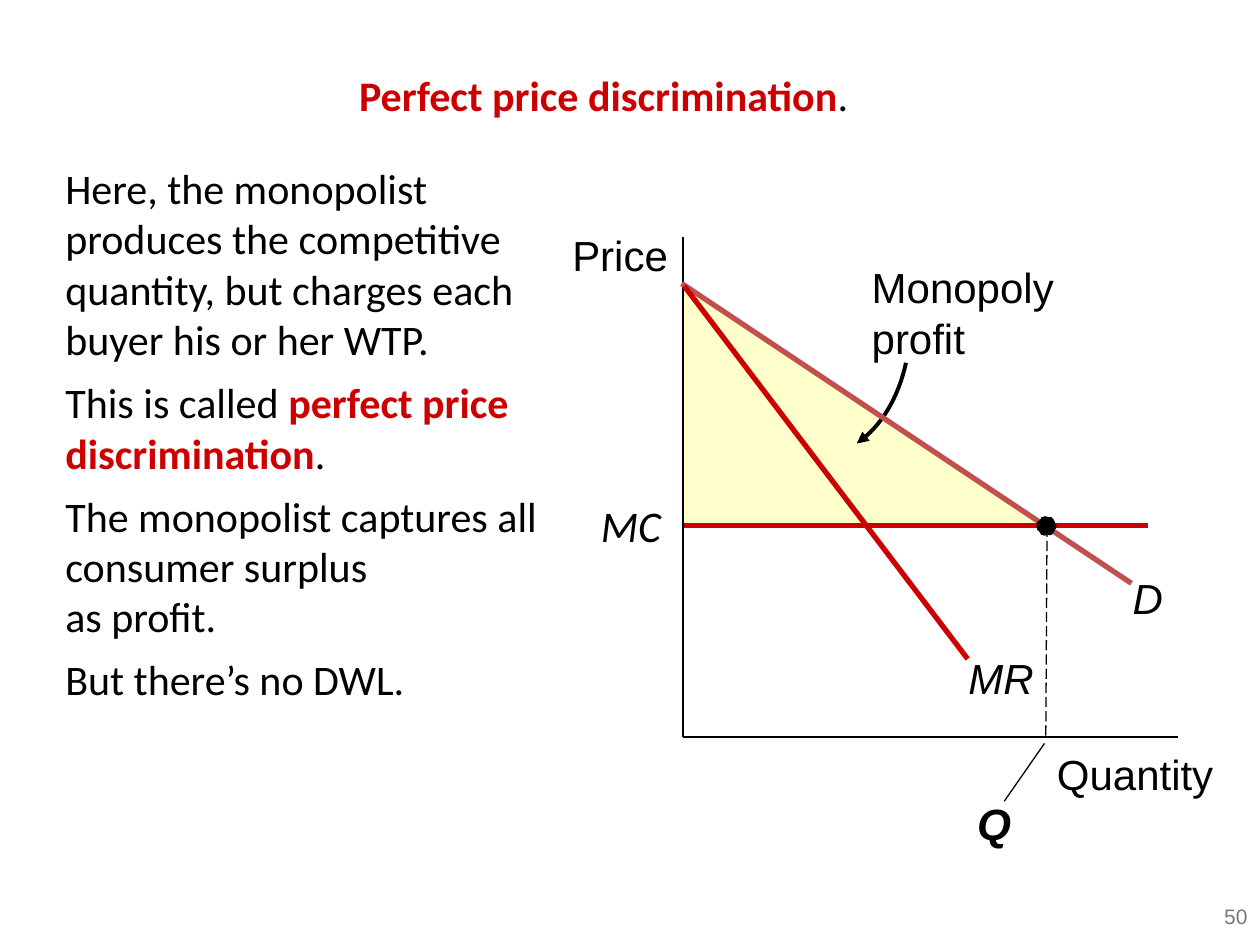
from dataclasses import dataclass
from typing import NamedTuple

from lxml.etree import SubElement
from pptx import Presentation
from pptx.dml.color import RGBColor
from pptx.enum.dml import MSO_LINE
from pptx.enum.shapes import MSO_CONNECTOR, MSO_SHAPE
from pptx.enum.text import MSO_ANCHOR, MSO_AUTO_SIZE, PP_ALIGN
from pptx.oxml.ns import qn
from pptx.util import Inches, Pt


@dataclass(frozen=True)
class Theme:
    black: str = "000000"
    white: str = "FFFFFF"
    red: str = "CC0000"
    demand: str = "C0504D"
    profit: str = "FFFFCC"
    grey: str = "777777"
    text_font: str = "Calibri"
    label_font: str = "Arial"
    text_size: float = 24
    large_size: float = 25
    number_size: float = 12
    thin: float = 0.75
    arrow: float = 2.25
    thick: float = 3


class Run(NamedTuple):
    text: str
    color: str = "000000"
    bold: bool = False


class Line(NamedTuple):
    begin: tuple[float, float]
    end: tuple[float, float]
    color: str
    width: float
    dash: MSO_LINE | None = None


class Label(NamedTuple):
    text: str
    box: tuple[float, float, float, float]
    align: PP_ALIGN = PP_ALIGN.LEFT
    italic: bool = False
    font: str = "Arial"
    size: float = 24
    color: str = "000000"
    inset: bool = True
    anchor: MSO_ANCHOR = MSO_ANCHOR.TOP


T = Theme()
ORIGIN = (5.42, 5.85)
LINES = [
    Line((5.41, 4.17), (9.11, 4.17), T.red, T.thick),
    Line((5.42, 1.88), ORIGIN, T.black, T.thin),
    Line(ORIGIN, (9.35, 5.85), T.black, T.thin),
    Line((5.41, 2.25), (8.98, 4.63), T.demand, T.thick),
    Line((5.43, 2.27), (7.68, 5.23), T.red, T.thick),
    Line((8.31, 4.18), (8.3, 5.85), T.black, T.thin, MSO_LINE.LONG_DASH),
    Line((7.97, 6.36), (8.29, 5.9), T.black, T.thin),
]
LABELS = [
    Label("Monopoly profit", (6.82, 2.03, 2, 0.9)),
    Label("MC", (4.67, 3.91, 0.74, 0.52), italic=True, font=T.text_font, size=T.large_size),
    Label("Quantity", (8.27, 5.94, 1.36, 0.4), PP_ALIGN.RIGHT, inset=False),
    Label("Price", (3.66, 1.77, 1.74, 0.5), PP_ALIGN.RIGHT),
    Label("D", (8.87, 4.54, 0.48, 0.4), PP_ALIGN.CENTER, italic=True, inset=False),
    Label("MR", (7.62, 5.18, 0.65, 0.4), PP_ALIGN.CENTER, italic=True, inset=False),
    Label("50", (6.08, 7.07, 3.92, 0.4), PP_ALIGN.RIGHT, size=T.number_size,
          color=T.grey, anchor=MSO_ANCHOR.MIDDLE),
]
BODY = [
    [Run("Here, the monopolist produces the competitive quantity, "
         "but charges each buyer his or her WTP.")],
    [Run("This is called "), Run("perfect price discrimination", T.red, True), Run(".")],
    [Run("The monopolist captures all consumer surplus \nas profit.")],
    [Run("But there’s no DWL.")],
]
PROFIT_ARROW = [(7.19, 2.88), (7.13, 3.16), (6.99, 3.39), (6.8, 3.52)]


def rgb(color: str) -> RGBColor:
    return RGBColor.from_string(color)


def write(sp, paragraphs: list[list[Run]], *, font: str = T.label_font, size: float = T.text_size,
          align: PP_ALIGN = PP_ALIGN.LEFT, anchor: MSO_ANCHOR = MSO_ANCHOR.TOP,
          italic: bool = False, inset: bool = True, before: float = 0) -> None:
    """Fill a shape with formatted runs; a newline in a run becomes a line break."""
    tf = sp.text_frame
    tf.word_wrap = True
    tf.auto_size = MSO_AUTO_SIZE.NONE
    tf.vertical_anchor = anchor
    if not inset:
        tf.margin_left = tf.margin_top = tf.margin_right = tf.margin_bottom = 0
    for i, runs in enumerate(paragraphs):
        p = tf.add_paragraph() if i else tf.paragraphs[0]
        p.alignment = align
        p.space_before = Pt(before if i else 0)
        for run in runs:
            for j, part in enumerate(run.text.split("\n")):
                if j:
                    p.add_line_break()
                r = p.add_run()
                r.text = part
                r.font.name, r.font.size = font, Pt(size)
                r.font.bold, r.font.italic = run.bold, italic
                r.font.color.rgb = rgb(run.color)


def add_text(slide, box: tuple, paragraphs: list[list[Run]], **style) -> None:
    write(slide.shapes.add_textbox(*map(Inches, box)), paragraphs, **style)


def add_line(slide, line: Line) -> None:
    sp = slide.shapes.add_connector(MSO_CONNECTOR.STRAIGHT, *map(Inches, line.begin + line.end))
    sp.line.color.rgb = rgb(line.color)
    sp.line.width = Pt(line.width)
    if line.dash:
        sp.line.dash_style = line.dash
    SubElement(sp._element.spPr, qn("a:effectLst"))


def add_shape(slide, kind: MSO_SHAPE, box: tuple, fill: str | None = None,
              line: str | None = None):
    sp = slide.shapes.add_shape(kind, *map(Inches, box))
    sp.shadow.inherit = False
    if fill:
        sp.fill.solid()
        sp.fill.fore_color.rgb = rgb(fill)
    else:
        sp.fill.background()
    if line:
        sp.line.color.rgb = rgb(line)
        sp.line.width = Pt(T.thin)
    else:
        sp.line.fill.background()
    return sp


def add_curved_arrow(slide, controls: list[tuple[float, float]], steps: int = 16) -> None:
    """Draw a cubic Bezier curve with an arrowhead at its end."""
    points = []
    for i in range(steps + 1):
        t = i / steps
        weights = ((1 - t) ** 3, 3 * t * (1 - t) ** 2, 3 * t ** 2 * (1 - t), t ** 3)
        points.append(tuple(Inches(sum(w * c[axis] for w, c in zip(weights, controls)))
                            for axis in (0, 1)))
    builder = slide.shapes.build_freeform(*points[0])
    builder.add_line_segments(points[1:], close=False)
    sp = builder.convert_to_shape()
    sp.shadow.inherit = False
    sp.fill.background()
    sp.line.color.rgb = rgb(T.black)
    sp.line.width = Pt(T.arrow)
    SubElement(sp.line._get_or_add_ln(), qn("a:tailEnd"), type="triangle")


def main() -> None:
    prs = Presentation()
    prs.slide_width, prs.slide_height = Inches(10), Inches(7.5)
    slide = prs.slides.add_slide(prs.slide_layouts[5])

    title = slide.shapes.title
    title.left, title.top, title.width, title.height = map(Inches, (2.75, 0.5, 5.04, 0.5))
    write(title, [[Run("Perfect price discrimination", T.red, True), Run(".")]], font=T.text_font)
    add_text(slide, (0.42, 1.24, 3.95, 5.76), BODY, font=T.text_font, before=7.2)

    add_shape(slide, MSO_SHAPE.RIGHT_TRIANGLE, (5.42, 2.26, 2.85, 1.91), fill=T.profit)
    add_curved_arrow(slide, PROFIT_ARROW)
    quantity = add_shape(slide, MSO_SHAPE.RECTANGLE, (7.62, 6.3, 0.54, 0.47), line=T.white)
    write(quantity, [[Run("Q", bold=True)]], size=T.large_size, align=PP_ALIGN.CENTER,
          italic=True, inset=False, anchor=MSO_ANCHOR.MIDDLE)
    for line in LINES:
        add_line(slide, line)
    dot = add_shape(slide, MSO_SHAPE.OVAL, (8.23, 4.1, 0.15, 0.15), T.black, T.black)
    dot.line.dash_style = MSO_LINE.DASH
    for label in LABELS:
        add_text(slide, label.box, [[Run(label.text, label.color)]], font=label.font,
                 size=label.size, align=label.align, anchor=label.anchor,
                 italic=label.italic, inset=label.inset)
    prs.save("out.pptx")


if __name__ == "__main__":
    main()
